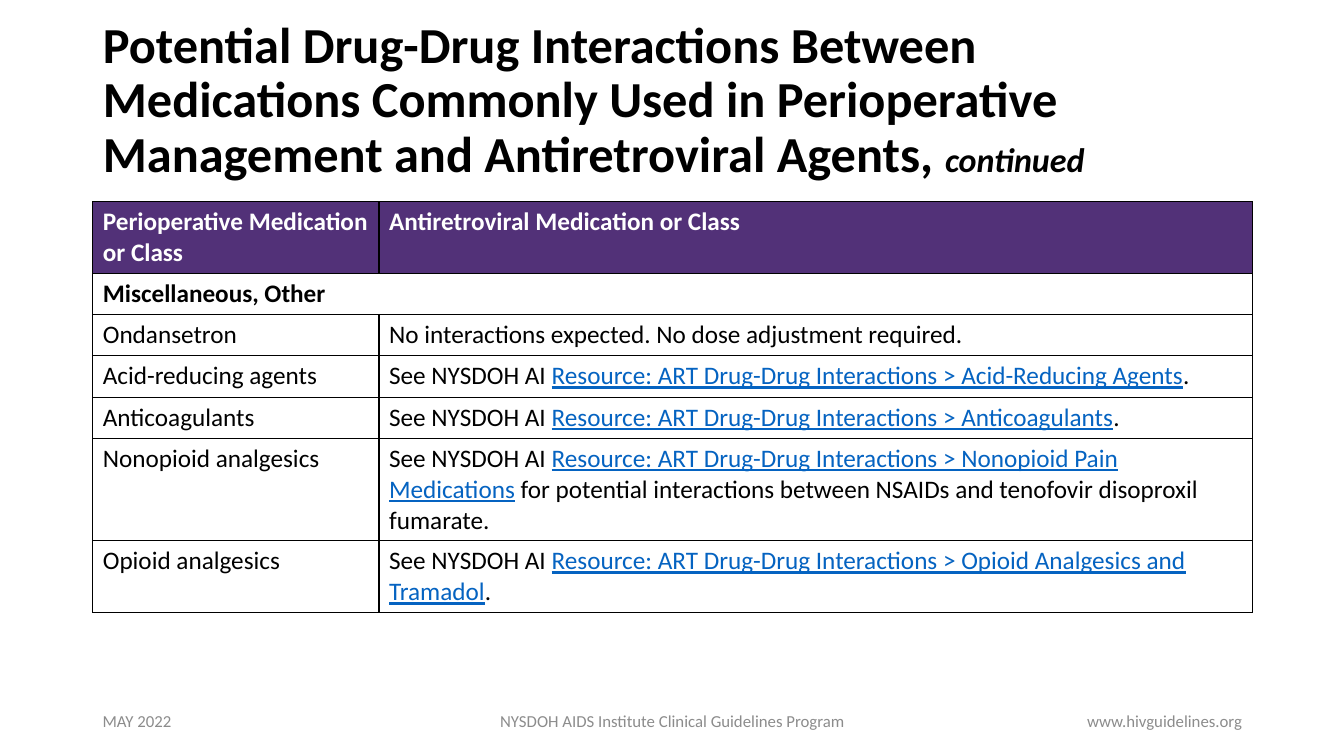
from dataclasses import dataclass
from lxml.etree import SubElement
from pptx import Presentation
from pptx.dml.color import RGBColor
from pptx.enum.text import MSO_ANCHOR, MSO_AUTO_SIZE, PP_ALIGN
from pptx.oxml import parse_xml
from pptx.oxml.ns import nsdecls, qn
from pptx.util import Emu, Pt

COLORS = {"black": "000000", "white": "FFFFFF", "purple": "523178",
          "link": "0563C1", "gray": "8C8C8C"}
FONT = "Calibri"
ROW_HEIGHT = 41
COLUMNS = (284, 866)
LEAD = "See NYSDOH AI "
RESOURCE = "Resource: ART Drug-Drug Interactions > "


@dataclass(frozen=True)
class Run:
    text: str
    color: str = "black"
    size: float = 18
    bold: bool = False
    italic: bool = False
    underline: bool = False


@dataclass(frozen=True)
class Footer:
    text: str
    left: int
    width: int
    align: PP_ALIGN


def px(n: int) -> Emu:
    """Convert px, a hundred to the inch, into EMU."""
    return Emu(n * 9144)


def rgb(name: str) -> RGBColor:
    """Look up a named colour."""
    return RGBColor.from_string(COLORS[name])


def add_runs(p, runs: list[Run]) -> None:
    """Append formatted runs to a paragraph."""
    for run in runs:
        for i, line in enumerate(run.text.split("\n")):
            if i:
                p.add_line_break()
            r = p.add_run()
            r.text = line
            values = {"name": FONT, "size": Pt(run.size), "bold": run.bold,
                      "italic": run.italic, "underline": run.underline}
            for key, value in values.items():
                setattr(r.font, key, value)
            r.font.color.rgb = rgb(run.color)


def resource(topic: str, ending: str = ".") -> list[Run]:
    """Build the sentence that refers to a resource section."""
    return [Run(LEAD), Run(RESOURCE + topic, "link", underline=True), Run(ending)]


def border_cell(cell) -> None:
    """Draw a thin black line on all four sides of a cell."""
    tcPr = cell._tc.get_or_add_tcPr()
    for i, side in enumerate(("lnL", "lnR", "lnT", "lnB")):
        ln = parse_xml(f'<a:{side} {nsdecls("a")} w="12700"/>')
        fill = SubElement(ln, qn("a:solidFill"))
        SubElement(fill, qn("a:srgbClr"), val=COLORS["black"])
        tcPr.insert(i, ln)


def add_title(s, runs: list[Run]) -> None:
    """Place and fill the title placeholder."""
    sp = s.shapes.title
    sp.left, sp.top, sp.width, sp.height = map(px, (92, 28, 1150, 145))
    tf = sp.text_frame
    values = {"auto_size": MSO_AUTO_SIZE.NONE, "word_wrap": True,
              "vertical_anchor": MSO_ANCHOR.MIDDLE}
    for key, value in values.items():
        setattr(tf, key, value)
    p = tf.paragraphs[0]
    p.alignment, p.line_spacing = PP_ALIGN.LEFT, 0.9
    add_runs(p, runs)


def add_interactions(s, rows: list[list[list[Run]]]) -> None:
    """Add the interaction table; a row with one entry spans all columns."""
    tbl = s.shapes.add_table(len(rows), len(COLUMNS), px(92), px(200),
                             px(sum(COLUMNS)), px(ROW_HEIGHT * len(rows))).table
    tbl.horz_banding = tbl.first_row = False
    for column, width in zip(tbl.columns, COLUMNS):
        column.width = px(width)
    for i, row in enumerate(rows):
        if len(row) == 1:
            tbl.cell(i, 0).merge(tbl.cell(i, len(COLUMNS) - 1))
        for j in range(len(COLUMNS)):
            cell = tbl.cell(i, j)
            if i == 0:
                cell.fill.solid()
                cell.fill.fore_color.rgb = rgb("purple")
            else:
                cell.fill.background()
            border_cell(cell)
            if j < len(row):
                add_runs(cell.text_frame.paragraphs[0], row[j])


def add_footer(s, footer: Footer) -> None:
    """Add one text box of the footer line."""
    tf = s.shapes.add_textbox(px(footer.left), px(695), px(footer.width), px(40)).text_frame
    tf.word_wrap = True
    tf.vertical_anchor = MSO_ANCHOR.MIDDLE
    p = tf.paragraphs[0]
    p.alignment = footer.align
    add_runs(p, [Run(footer.text, "gray", 12)])


TITLE = [
    Run("Potential Drug-Drug Interactions Between \nMedications Commonly Used in "
        "Perioperative Management and Antiretroviral Agents, ", size=36, bold=True),
    Run("continued", size=24.3, bold=True, italic=True),
]
ROWS = [
    [[Run("Perioperative Medication or Class", "white", bold=True)],
     [Run("Antiretroviral Medication or Class", "white", bold=True)]],
    [[Run("Miscellaneous, Other", bold=True)]],
    [[Run("Ondansetron")],
     [Run("No interactions expected. No dose adjustment required.")]],
    [[Run("Acid-reducing agents")], resource("Acid-Reducing Agents")],
    [[Run("Anticoagulants")], resource("Anticoagulants")],
    [[Run("Nonopioid analgesics")],
     resource("Nonopioid Pain Medications", " for potential interactions between "
              "NSAIDs and tenofovir disoproxil fumarate.")],
    [[Run("Opioid analgesics")], resource("Opioid Analgesics and Tramadol")],
]
FOOTERS = [
    Footer("NYSDOH AIDS Institute Clinical Guidelines Program", 442, 450, PP_ALIGN.CENTER),
    Footer("www.hivguidelines.org", 942, 300, PP_ALIGN.RIGHT),
    Footer("MAY 2022", 92, 300, PP_ALIGN.LEFT),
]


def main() -> None:
    """Build the slide and save it."""
    prs = Presentation()
    prs.slide_width, prs.slide_height = px(1333), px(750)
    s = prs.slides.add_slide(prs.slide_layouts[5])
    add_title(s, TITLE)
    add_interactions(s, ROWS)
    for footer in FOOTERS:
        add_footer(s, footer)
    prs.save("out.pptx")


if __name__ == "__main__":
    main()
